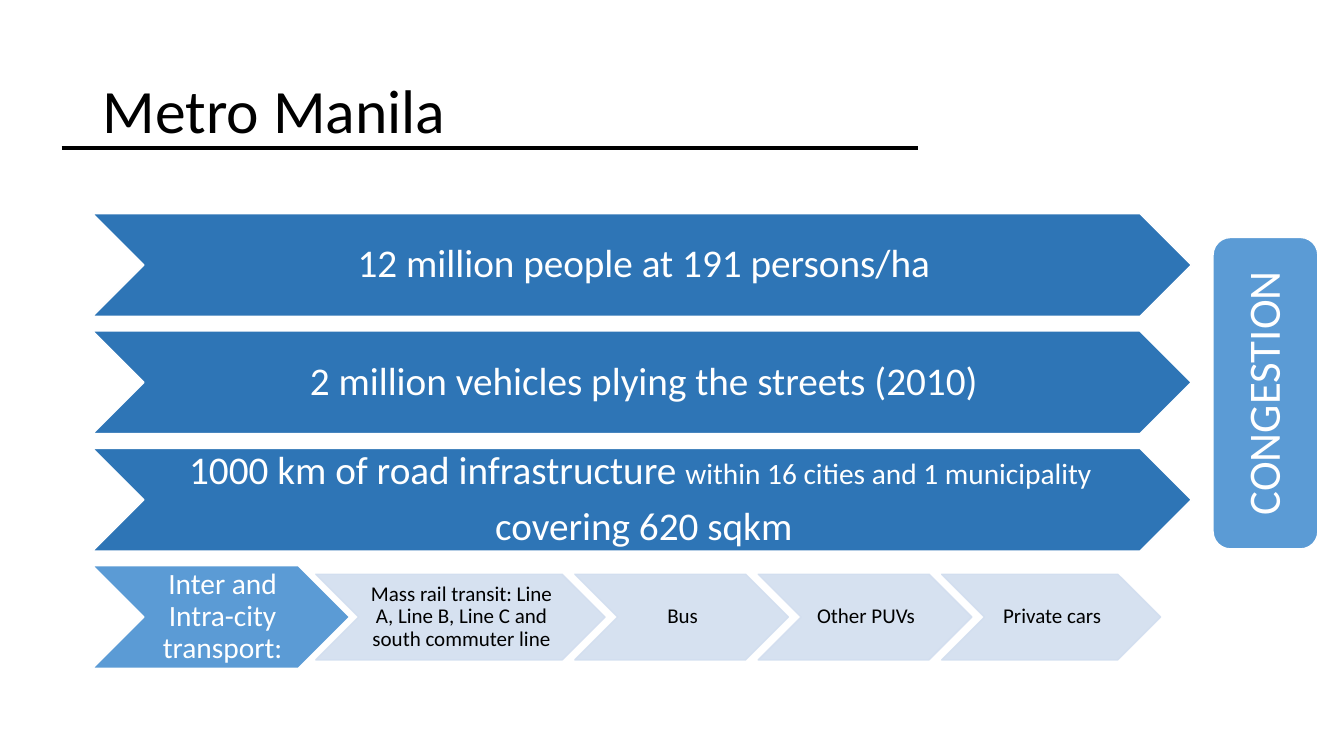
from lxml import etree
from pptx import Presentation
from pptx.dml.color import RGBColor
from pptx.enum.shapes import MSO_CONNECTOR, MSO_SHAPE
from pptx.enum.text import MSO_ANCHOR, PP_ALIGN
from pptx.oxml.ns import qn
from pptx.util import Pt

CHEVRON = MSO_SHAPE.CHEVRON
ROUNDED = MSO_SHAPE.ROUNDED_RECTANGLE
STRAIGHT = MSO_CONNECTOR.STRAIGHT
MIDDLE = MSO_ANCHOR.MIDDLE
LEFT, CENTER = PP_ALIGN.LEFT, PP_ALIGN.CENTER

FONT = "Calibri"
WHITE, BLACK = "FFFFFF", "000000"
DEEP_BLUE, MID_BLUE, PALE_BLUE = "2E75B6", "5B9BD5", "D2DEEF"

FACTS = [
    [[("12 million people at 191 persons/ha", 28)]],
    [[("2 million vehicles plying the streets (2010)", 28)]],
    [
        [("1000 km of road infrastructure ", 28),
         ("within 16 cities and 1 municipality ", 21)],
        [("covering 620 sqkm", 28)],
    ],
]
MODES = [
    ("Mass rail transit: Line A, Line B, Line C and south commuter line", 206.6),
    ("Bus", 152.6),
    ("Other PUVs", 152.6),
    ("Private cars", 156.4),
]


def paint(color_format, color):
    color_format.rgb = RGBColor.from_string(color)


def write(shape, paragraphs, color=WHITE, align=CENTER, insets=(2.5, 1.2, 0, 1.2), gap=0):
    frame = shape.text_frame
    frame.word_wrap = True
    frame.vertical_anchor = MIDDLE
    frame.margin_left, frame.margin_top, frame.margin_right, frame.margin_bottom = map(Pt, insets)
    for index, spans in enumerate(paragraphs):
        para = frame.paragraphs[0] if index == 0 else frame.add_paragraph()
        para.alignment = align
        para.line_spacing = 0.9
        para.space_before = Pt(gap if index else 0)
        for text, size in spans:
            span = para.add_run()
            span.text = text
            span.font.name = FONT
            span.font.size = Pt(size)
            paint(span.font.color, color)


def add_block(page, kind, box, fill, line=WHITE, opacity=100):
    shape = page.shapes.add_shape(kind, *map(Pt, box))
    shape.shadow.inherit = False
    shape.fill.solid()
    paint(shape.fill.fore_color, fill)
    shape.line.fill.solid()
    paint(shape.line.color, line)
    shape.line.width = Pt(1)
    if opacity < 100:
        for color in shape._element.spPr.iter(qn("a:srgbClr")):
            etree.SubElement(color, qn("a:alpha")).set("val", str(opacity * 1000))
    return shape


def add_heading(page, box):
    left, top, width, height = box
    title = page.shapes.add_textbox(*map(Pt, box))
    write(title, [[("Metro Manila", 44)]], BLACK, LEFT, (7.2, 3.6, 7.2, 3.6))
    rule_left, rule_top = left - 22.2, top + 77
    rule = page.shapes.add_connector(
        STRAIGHT, Pt(rule_left), Pt(rule_top), Pt(rule_left + 612), Pt(rule_top))
    paint(rule.line.color, BLACK)
    rule.line.width = Pt(3)
    etree.SubElement(rule._element.spPr, qn("a:effectLst"))


def add_facts(page, box, pitch, row_height):
    left, top, width, _ = box
    for index, paragraphs in enumerate(FACTS):
        row = (left, top + index * pitch, width, row_height)
        write(add_block(page, CHEVRON, row, DEEP_BLUE), paragraphs, gap=9.8)


def add_transport(page, box):
    left, top, _, height = box
    lead_width, mode_height, overlap = 183.6, 61.2, 21.6
    lead = add_block(page, CHEVRON, (left, top, lead_width, height), MID_BLUE)
    write(lead, [[("Inter and Intra-city transport:", 21)]], insets=(2, 1, 0, 1))
    mode_left = left + lead_width - 24.2
    mode_top = top + (height - mode_height) / 2
    for label, width in MODES:
        mode = add_block(page, CHEVRON, (mode_left, mode_top, width, mode_height),
                         PALE_BLUE, PALE_BLUE, opacity=90)
        write(mode, [[(label, 15)]], BLACK, insets=(1.5, 0.8, 0, 0.8))
        mode_left += width - overlap


def add_congestion(page, box):
    left, top, width, height = box
    unturned = (left + (width - height) / 2, top + (height - width) / 2, height, width)
    block = add_block(page, ROUNDED, unturned, MID_BLUE)
    block.rotation = 270
    write(block, [[("CONGESTION", 32)]], insets=(9.4,) * 4)


def main():
    deck = Presentation()
    deck.slide_width, deck.slide_height = Pt(960), Pt(540)
    page = deck.slides.add_slide(deck.slide_layouts[6])
    left, top, width, row_height, pitch = 66.2, 152.7, 784.8, 73.3, 83.8
    add_heading(page, (left, 28.8, 828, 104.4))
    add_facts(page, (left, top, width, 2 * pitch + row_height), pitch, row_height)
    add_transport(page, (left, top + 3 * pitch, width, row_height))
    add_congestion(page, (866.5, 169.6, 74.9, 222.5))
    deck.save("out.pptx")


if __name__ == "__main__":
    main()
